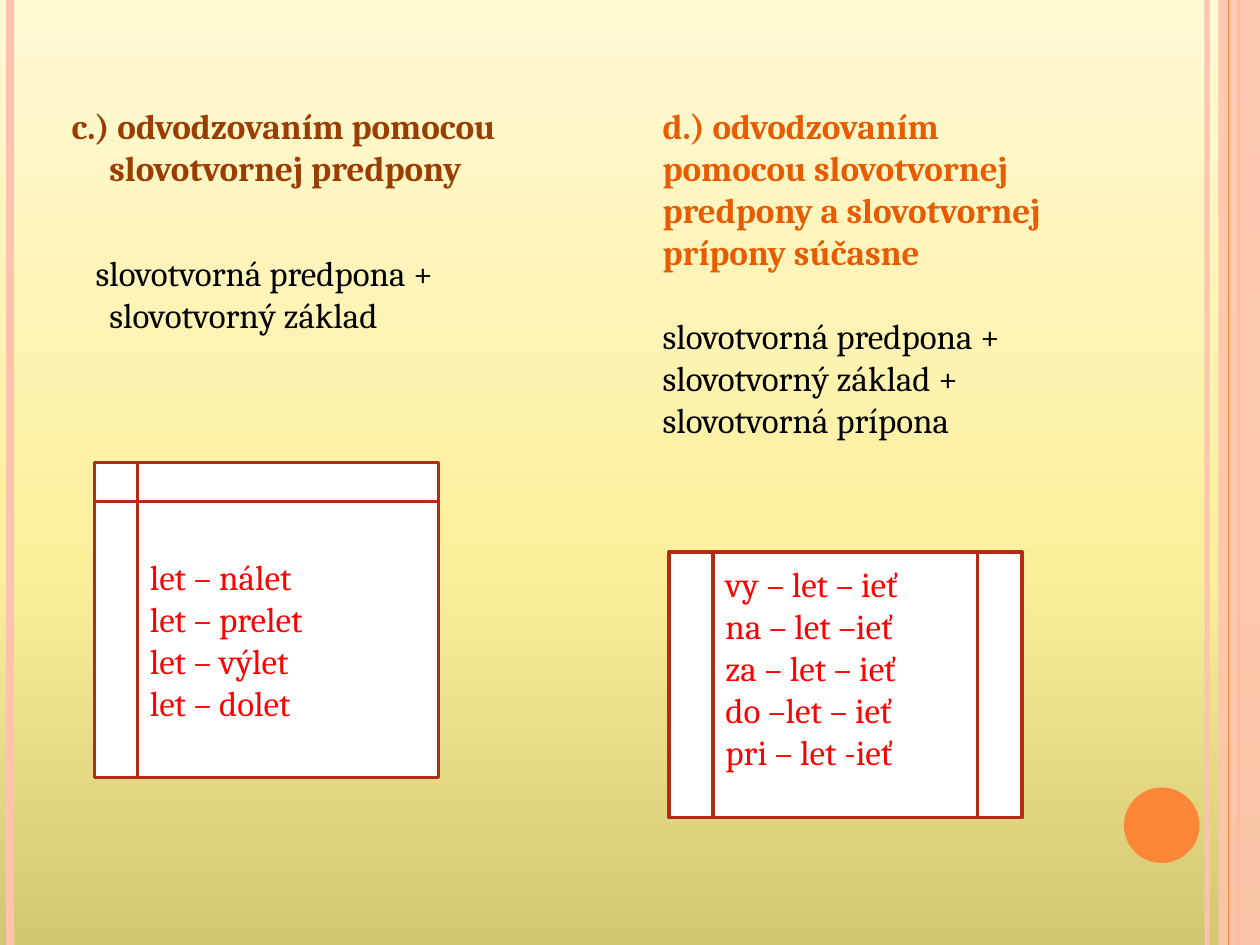
from dataclasses import dataclass

from lxml.etree import SubElement
from pptx import Presentation
from pptx.dml.color import RGBColor
from pptx.enum.shapes import MSO_CONNECTOR, MSO_SHAPE
from pptx.enum.text import MSO_ANCHOR, PP_ALIGN
from pptx.oxml.ns import qn
from pptx.util import Inches, Pt


@dataclass(frozen=True)
class Theme:
    font: str = "Cambria"
    size: int = 20
    text: str = "000000"
    brown: str = "9A3D01"
    orange: str = "E75C01"
    example: str = "FF0000"
    frame: str = "B32C16"
    paper: str = "FFFFFF"
    accent: str = "FE8637"
    pale: str = "FEC3AE"
    background: tuple = ((0, "D3C772"), (40, "FCEF9B"), (100, "FFF9D5"))


THEME = Theme()


def color(value):
    return RGBColor.from_string(value)


def set_alpha(shape, percent):
    """Make the first solid colour of a shape partly transparent."""
    solid = shape.element.spPr.find(".//" + qn("a:srgbClr"))
    SubElement(solid, qn("a:alpha")).set("val", str(percent * 1000))


def add_panel(page, preset, box, fill, line=None):
    shape = page.shapes.add_shape(preset, *map(Inches, box))
    shape.shadow.inherit = False
    shape.fill.solid()
    shape.fill.fore_color.rgb = color(fill)
    if line:
        shape.line.color.rgb = color(line)
        shape.line.width = Pt(2)
    else:
        shape.line.fill.background()
    return shape


def add_stripe(page, left, height, tint, width):
    stripe = page.shapes.add_connector(
        MSO_CONNECTOR.STRAIGHT, Inches(left), 0, Inches(left), Inches(height))
    stripe.line.color.rgb = color(tint)
    stripe.line.width = Pt(width)
    SubElement(stripe.element.spPr, qn("a:effectLst"))
    return stripe


def write_paragraph(para, text, tint, bold=False):
    para.text = text
    for span in para.runs:
        span.font.name = THEME.font
        span.font.size = Pt(THEME.size)
        span.font.bold = bold
        span.font.color.rgb = color(tint)


def paint_background(page):
    fill = page.background.fill
    fill.gradient()
    fill.gradient_angle = 90
    stops = page.element.find(".//" + qn("a:gsLst"))
    for stop in list(stops):
        stops.remove(stop)
    for position, tint in THEME.background:
        stop = SubElement(stops, qn("a:gs"), pos=str(position * 1000))
        SubElement(stop, qn("a:srgbClr"), val=tint)


def add_decoration(page, width, height):
    """Edge stripes, right band and corner disc."""
    set_alpha(add_stripe(page, width - 0.42, height, THEME.pale, 3), 93)
    add_stripe(page, 0.08, height, THEME.pale, 4.5)
    add_stripe(page, width - 0.17, height, THEME.accent, 1.5)
    band = (width - 0.33, 0, 0.33, height)
    set_alpha(add_panel(page, MSO_SHAPE.RECTANGLE, band, THEME.pale), 87)
    add_stripe(page, width - 0.25, height, THEME.accent, 0.75)
    add_panel(page, MSO_SHAPE.OVAL, (8.92, 6.25, 0.6, 0.6), THEME.accent)


def add_rule(page, box, heading, tint, formula, gap, margin=0, indents=(0, 0)):
    """A bold heading with the word-formation formula below it."""
    frame = page.shapes.add_textbox(*map(Inches, box)).text_frame
    frame.word_wrap = True
    title, body = frame.paragraphs[0], frame.add_paragraph()
    write_paragraph(title, heading, tint, bold=True)
    write_paragraph(body, formula, THEME.text)
    body.space_before = Pt(gap)
    for para, indent in zip((title, body), indents):
        properties = para._p.get_or_add_pPr()
        properties.set("marL", str(Inches(margin)))
        properties.set("indent", str(Inches(indent)))


def add_examples(page, preset, box, lines, align, bottom=0.05):
    """A framed list of example words."""
    frame = add_panel(page, preset, box, THEME.paper, THEME.frame).text_frame
    frame.vertical_anchor = MSO_ANCHOR.MIDDLE
    frame.margin_bottom = Inches(bottom)
    frame.text = "\n".join(lines)
    for para, line in zip(frame.paragraphs, lines):
        write_paragraph(para, line, THEME.example)
        para.alignment = align


def main():
    width, height = 10, 7.5
    deck = Presentation()
    deck.slide_width, deck.slide_height = Inches(width), Inches(height)
    page = deck.slides.add_slide(deck.slide_layouts[6])
    paint_background(page)
    add_decoration(page, width, height)

    # Left column: prefix
    add_rule(page, (0.47, 0.78, 4.39, 2.5),
             "c.) odvodzovaním pomocou slovotvornej predpony", THEME.brown,
             "slovotvorná predpona + slovotvorný základ",
             gap=36, margin=0.3, indents=(-0.3, -0.11))
    add_examples(page, MSO_SHAPE.FLOWCHART_INTERNAL_STORAGE,
                 (0.75, 3.67, 2.73, 2.5),
                 ["let – nálet", "let – prelet", "let – výlet", "let – dolet"],
                 PP_ALIGN.JUSTIFY)

    # Right column: prefix and suffix together
    add_rule(page, (5.16, 0.78, 3.59, 3.74),
             "d.) odvodzovaním pomocou slovotvornej predpony a\u00a0slovotvornej "
             "prípony súčasne", THEME.orange,
             "slovotvorná predpona + slovotvorný základ + slovotvorná prípona",
             gap=24)
    add_examples(page, MSO_SHAPE.FLOWCHART_PREDEFINED_PROCESS,
                 (5.31, 4.38, 2.8, 2.11),
                 ["vy – let – ieť", "na – let –ieť", "za – let – ieť",
                  "do –let – ieť", "pri – let -ieť"],
                 PP_ALIGN.LEFT, bottom=0.33)

    deck.save("out.pptx")


if __name__ == "__main__":
    main()
